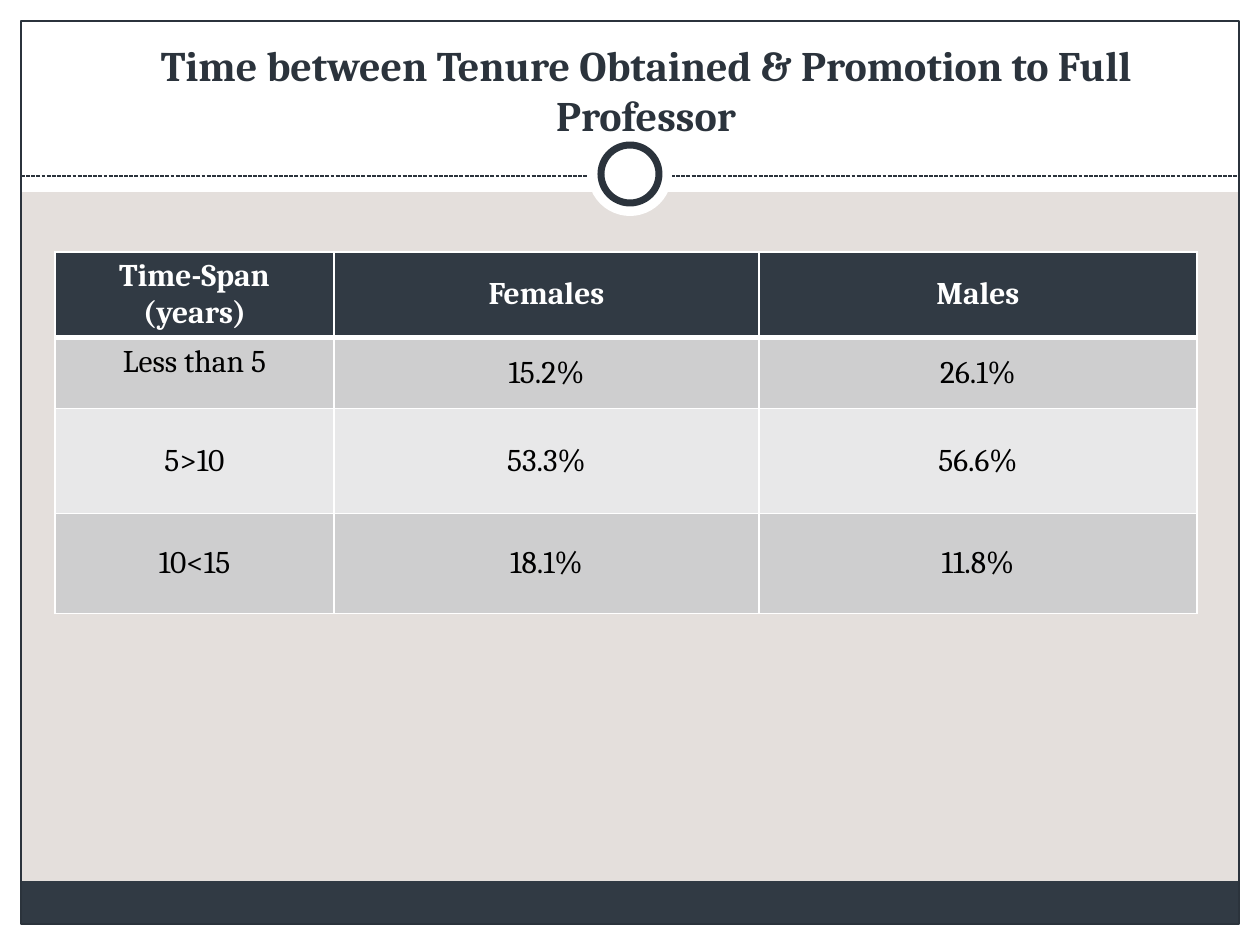
"""Builds a slide comparing years from tenure to full professor by gender."""
from lxml import etree
from pptx import Presentation
from pptx import util as u
from pptx.dml.color import RGBColor
from pptx.enum import dml, shapes, text
from pptx.oxml.ns import qn

THEME = {
    "font": "Cambria", "title_size": 24, "table_size": 18,
    "ground": "E4DFDC", "white": "FFFFFF", "ink": "2B333C", "black": "000000",
    "header": "313A44", "bands": ("CECECF", "E8E8E9"),
}
TITLE = "Time between Tenure Obtained & Promotion to Full Professor"
ROWS = [
    ("Time-Span\n(years)", "Females", "Males"),
    ("Less than 5", "15.2%", "26.1%"),
    ("5>10", "53.3%", "56.6%"),
    ("10<15", "18.1%", "11.8%"),
]
TOP_ANCHORED = {(0, 0), (1, 0)}
COLUMN_WIDTHS = (279, 425, 438)
ROW_HEIGHTS = (82, 71, 105, 100)
TABLE_LEFT, TABLE_TOP = 55, 252
WIDTH, HEIGHT, MARGIN = 1260, 945, 21
RING_X, RING_Y = 630, 174


def px(length):
    return u.Emu(round(length * 914400 / 126))


def color(name):
    return RGBColor.from_string(THEME.get(name, name))


def add_block(slide, kind, box, fill=None, line=None, weight=0.75):
    block = slide.shapes.add_shape(kind, *map(px, box))
    block.shadow.inherit = False
    if fill:
        block.fill.solid()
        block.fill.fore_color.rgb = color(fill)
    else:
        block.fill.background()
    if line:
        block.line.color.rgb = color(line)
        block.line.width = u.Pt(weight)
    else:
        block.line.fill.background()


def add_circle(slide, size, line=None, weight=0.75):
    box = (RING_X - size / 2, RING_Y - size / 2, size, size)
    add_block(slide, shapes.MSO_SHAPE.OVAL, box, "white", line, weight)


def add_divider(slide, y):
    divider = slide.shapes.add_connector(
        shapes.MSO_CONNECTOR.STRAIGHT, px(MARGIN), px(y), px(WIDTH - MARGIN), px(y))
    divider.line.color.rgb = color("ink")
    divider.line.width = u.Pt(0.75)
    divider.line.dash_style = dml.MSO_LINE.SQUARE_DOT
    etree.SubElement(divider._element.spPr, qn("a:effectLst"))


def write(frame, content, size, ink, bold):
    for index, line in enumerate(content.split("\n")):
        paragraph = frame.add_paragraph() if index else frame.paragraphs[0]
        paragraph.alignment = text.PP_ALIGN.CENTER
        run = paragraph.add_run()
        run.text = line
        run.font.name = THEME["font"]
        run.font.size = u.Pt(THEME[size])
        run.font.bold = bold
        run.font.color.rgb = color(ink)


def add_borders(cell, bottom):
    properties = cell._tc.get_or_add_tcPr()
    for index, side in enumerate(("lnL", "lnR", "lnT", "lnB")):
        weight = bottom if side == "lnB" else 1
        border = etree.Element(qn(f"a:{side}"), w=str(u.Pt(weight)))
        fill = etree.SubElement(border, qn("a:solidFill"))
        etree.SubElement(fill, qn("a:srgbClr"), val=THEME["white"])
        properties.insert(index, border)


def add_time_table(slide):
    size = sum(COLUMN_WIDTHS), sum(ROW_HEIGHTS)
    table = slide.shapes.add_table(
        len(ROWS), len(COLUMN_WIDTHS), *map(px, (TABLE_LEFT, TABLE_TOP, *size))).table
    for column, width in zip(table.columns, COLUMN_WIDTHS):
        column.width = px(width)
    for r, values in enumerate(ROWS):
        table.rows[r].height = px(ROW_HEIGHTS[r])
        header = r == 0
        for c, value in enumerate(values):
            cell = table.cell(r, c)
            cell.fill.solid()
            cell.fill.fore_color.rgb = color("header" if header else THEME["bands"][(r - 1) % 2])
            top = (r, c) in TOP_ANCHORED
            cell.vertical_anchor = text.MSO_ANCHOR.TOP if top else text.MSO_ANCHOR.MIDDLE
            write(cell.text_frame, value, "table_size", "white" if header else "black", header)
            add_borders(cell, 3 if r < 1 else 1)


def set_title(slide):
    title = slide.shapes.title
    title.left, title.top, title.width, title.height = map(px, (95, 32, 1102, 115))
    frame = title.text_frame
    frame.word_wrap = True
    frame.auto_size = text.MSO_AUTO_SIZE.NONE
    frame.vertical_anchor = text.MSO_ANCHOR.MIDDLE
    write(frame, TITLE, "title_size", "ink", True)
    slide.shapes._spTree.append(title._element)


def main():
    deck = Presentation()
    deck.slide_width, deck.slide_height = px(WIDTH), px(HEIGHT)
    slide = deck.slides.add_slide(deck.slide_layouts[5])
    slide.background.fill.solid()
    slide.background.fill.fore_color.rgb = color("ground")
    rectangle = shapes.MSO_SHAPE.RECTANGLE
    add_block(slide, rectangle, (0, 0, WIDTH, 192), "white")
    add_divider(slide, 176)
    add_circle(slide, 84)
    add_circle(slide, 58, "ink", 4)
    for edge in (
        (0, HEIGHT - MARGIN, WIDTH, MARGIN),
        (0, 0, WIDTH, MARGIN),
        (WIDTH - MARGIN, 0, MARGIN, HEIGHT),
        (0, 0, MARGIN, HEIGHT),
    ):
        add_block(slide, rectangle, edge, "white")
    inner = WIDTH - 2 * MARGIN
    add_block(slide, rectangle, (MARGIN, 881, inner, 43), "header")
    add_block(slide, rectangle, (MARGIN, MARGIN, inner, HEIGHT - 2 * MARGIN), line="ink")
    add_time_table(slide)
    set_title(slide)
    deck.save("out.pptx")


if __name__ == "__main__":
    main()
